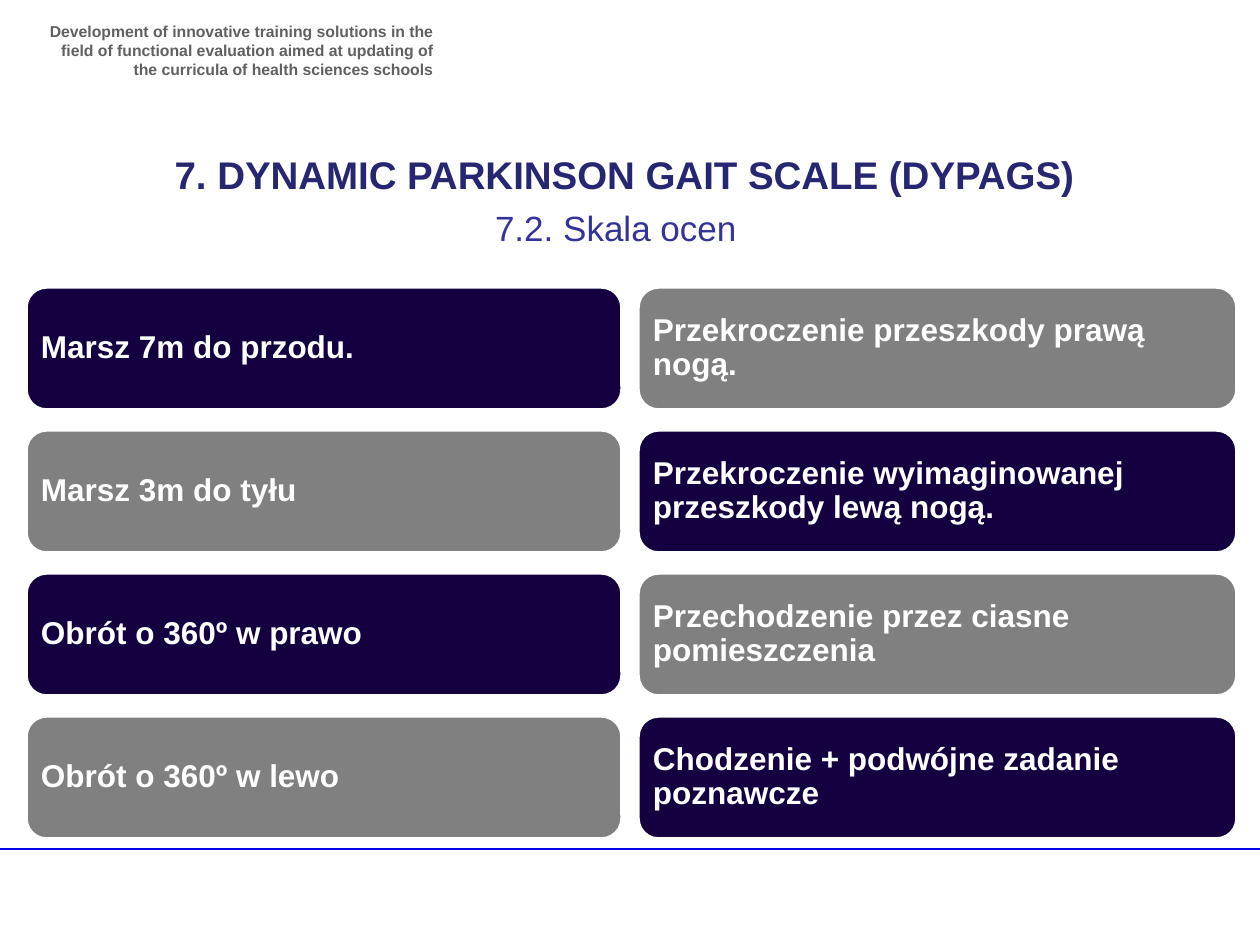
from dataclasses import dataclass
from pptx import Presentation
from pptx.dml.color import RGBColor
from pptx.enum.shapes import MSO_CONNECTOR, MSO_SHAPE
from pptx.enum.text import MSO_ANCHOR, MSO_AUTO_SIZE, PP_ALIGN
from pptx.oxml.ns import qn
from pptx.util import Emu, Pt
from lxml.etree import SubElement

SCALE = 914400 / 126


@dataclass(frozen=True)
class Theme:
    font: str = "Arial"
    white: str = "FFFFFF"
    grey: str = "808080"
    navy: str = "140041"
    rule: str = "0404E6"
    head: str = "606060"
    title: str = "262673"
    sub: str = "333399"
    head_pt: int = 9
    title_pt: int = 22
    sub_pt: int = 20
    card_pt: int = 18


THEME = Theme()

# Card texts by column
CARDS = (
    ("Marsz 7m do przodu.", "Marsz 3m do tyłu",
     "Obrót o 360º w prawo", "Obrót o 360º w lewo"),
    ("Przekroczenie przeszkody prawą nogą.",
     "Przekroczenie wyimaginowanej przeszkody lewą nogą.",
     "Przechodzenie przez ciasne pomieszczenia",
     "Chodzenie + podwójne zadanie poznawcze"),
)
COLUMNS = ((26, 596), (638, 599))  # left and width
TOP, STEP, HEIGHT = 287, 143, 123


def px(num):
    return Emu(round(num * SCALE))


def rgb(code):
    return RGBColor.from_string(code)


def apply(obj, form):
    for key, value in form.items():
        setattr(obj, key, value)


def place(shape, left, top, width, height):
    apply(shape, {"left": px(left), "top": px(top),
                  "width": px(width), "height": px(height)})


def write(shape, text, size, color, bold=True, align=PP_ALIGN.LEFT,
          anchor=MSO_ANCHOR.TOP, inset=(13, 6), space=1.0):
    side, edge = map(px, inset)
    frame = shape.text_frame
    apply(frame, {"word_wrap": True, "auto_size": MSO_AUTO_SIZE.NONE,
                  "vertical_anchor": anchor,
                  "margin_left": side, "margin_right": side,
                  "margin_top": edge, "margin_bottom": edge})
    frame.text = text
    para = frame.paragraphs[0]
    apply(para, {"alignment": align, "line_spacing": space,
                 "space_before": Pt(0)})
    font = para.runs[0].font
    apply(font, {"name": THEME.font, "size": Pt(size), "bold": bold})
    font.color.rgb = rgb(color)


def add_rule(slide, left, right, top):
    line = slide.shapes.add_connector(
        MSO_CONNECTOR.STRAIGHT, px(left), px(top), px(right), px(top))
    line.line.color.rgb = rgb(THEME.rule)
    line.line.width = Pt(1)
    SubElement(line._element.spPr, qn("a:effectLst"))


def add_card(slide, box, text, fill):
    card = slide.shapes.add_shape(
        MSO_SHAPE.ROUNDED_RECTANGLE, *map(px, box))
    card.shadow.inherit = False
    card.fill.solid()
    card.fill.fore_color.rgb = rgb(fill)
    card.line.color.rgb = rgb(THEME.white)
    card.line.width = Pt(2)
    write(card, text, THEME.card_pt, THEME.white,
          anchor=MSO_ANCHOR.MIDDLE, inset=(9, 9), space=0.9)


def main():
    deck = Presentation()
    apply(deck, {"slide_width": px(1260), "slide_height": px(945)})
    slide = deck.slides.add_slide(deck.slide_layouts[0])

    # Footer rule and project header
    add_rule(slide, -6, 1260, 849)
    head = slide.shapes.add_textbox(*map(px, (35, 16, 411, 59)))
    write(head, "Development of innovative training solutions in the ﬁeld of "
          "functional evaluation aimed at updating of the curricula of health "
          "sciences schools", THEME.head_pt, THEME.head,
          align=PP_ALIGN.RIGHT)

    # Title and subtitle
    title, sub = slide.shapes.title, slide.placeholders[1]
    place(title, 84, 145, 1081, 59)
    write(title, "7. DYNAMIC PARKINSON GAIT SCALE (DYPAGS)",
          THEME.title_pt, THEME.title, align=PP_ALIGN.CENTER)
    place(sub, 482, 200, 295, 97)
    write(sub, "7.2. Skala ocen", THEME.sub_pt, THEME.sub, bold=False)

    # Two columns of cards in alternating colours
    fills = (THEME.navy, THEME.grey)
    for col, (left, width) in enumerate(COLUMNS):
        for row, text in enumerate(CARDS[col]):
            box = (left, TOP + row * STEP, width, HEIGHT)
            add_card(slide, box, text, fills[(row + col) % 2])

    deck.save("out.pptx")


if __name__ == "__main__":
    main()
